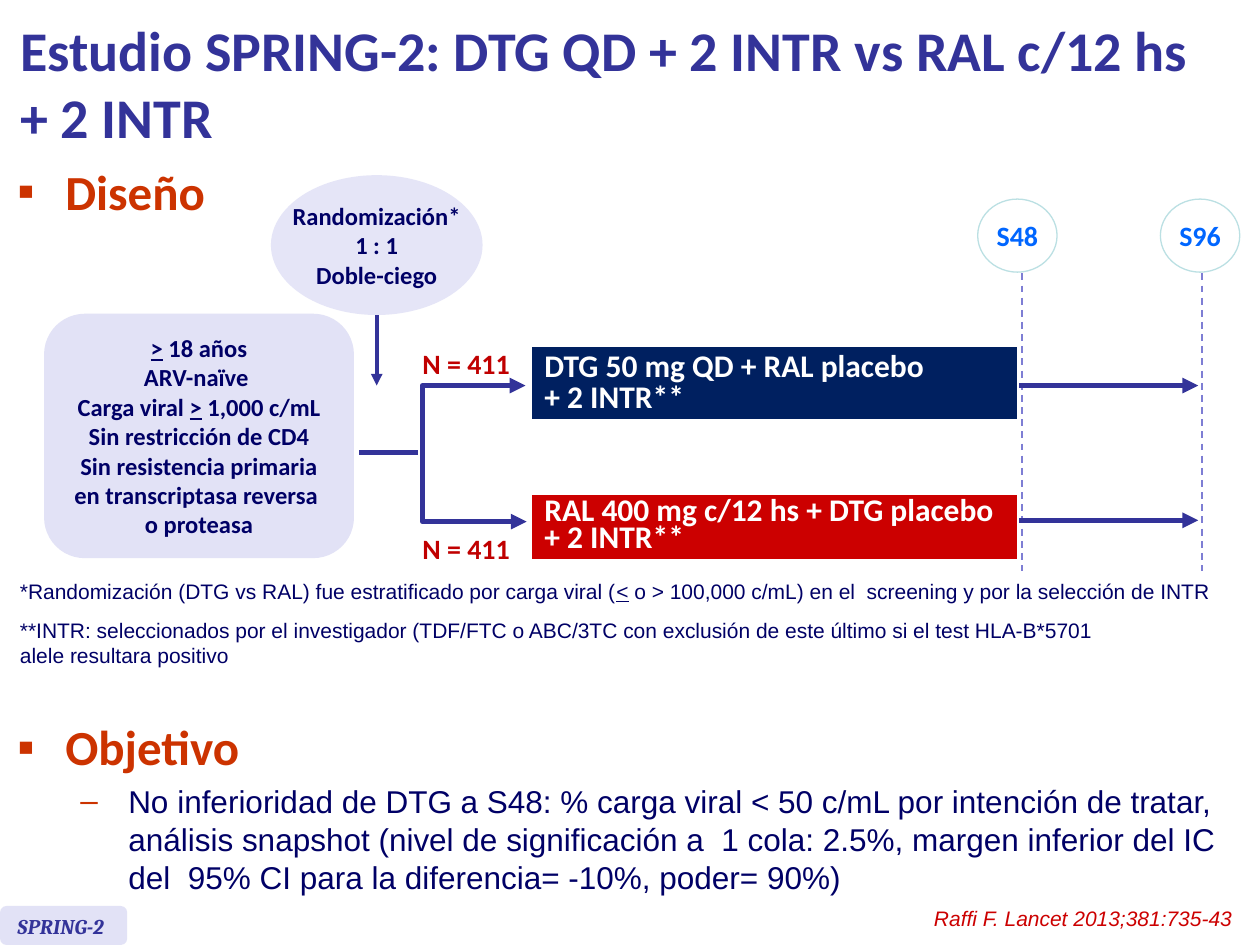
"""Build the SPRING-2 study design slide."""
from lxml.etree import SubElement
from pptx import Presentation
from pptx.dml.color import RGBColor
from pptx.enum.dml import MSO_LINE
from pptx.enum.shapes import MSO_CONNECTOR, MSO_SHAPE
from pptx.enum.text import MSO_ANCHOR, PP_ALIGN
from pptx.oxml.ns import qn
from pptx.util import Inches, Pt

BLUE = RGBColor(0x33, 0x33, 0x99)
NAVY = RGBColor(0x00, 0x00, 0x66)
DARK = RGBColor(0x00, 0x20, 0x60)
RUST = RGBColor(0xCC, 0x33, 0x00)
RED = RGBColor(0xCC, 0x00, 0x00)
WINE = RGBColor(0xC0, 0x00, 0x00)
SKY = RGBColor(0x00, 0x66, 0xFF)
PALE = RGBColor(0xE2, 0xE2, 0xF6)
MIST = RGBColor(0xE5, 0xE5, 0xF7)
TEAL = RGBColor(0xBB, 0xE0, 0xE3)
DASH = RGBColor(0x7E, 0x7E, 0xD4)
WHITE = RGBColor(0xFF, 0xFF, 0xFF)

TITLE = "Estudio SPRING-2: DTG QD + 2 INTR vs RAL c/12 hs\n+ 2 INTR"
RANDOM = ["Randomización*", "1 : 1", "Doble-ciego"]
CRITERIA = [
    "_>_ 18 años",
    "ARV-naïve ",
    "Carga viral _>_ 1,000 c/mL",
    "Sin restricción de CD4",
    "Sin resistencia primaria",
    " en transcriptasa reversa  ",
    "o proteasa",
]
GOAL = (
    "No inferioridad de DTG a S48: % carga viral < 50 c/mL por intención de tratar, "
    "análisis snapshot (nivel de significación a  1 cola: 2.5%, margen inferior del IC "
    "del  95% CI para la diferencia= -10%, poder= 90%)"
)
NOTES = [
    (4.54, 0.3, "*Randomización (DTG vs RAL) fue estratificado por carga viral "
     "(_<_ o > 100,000 c/mL) en el  screening y por la selección de INTR"),
    (4.85, 0.5, "**INTR: seleccionados por el investigador (TDF/FTC o ABC/3TC con "
     "exclusión de este último si el test HLA-B*5701 \nalele resultara positivo"),
]
ARMS = [
    ("DTG 50 mg QD + RAL placebo \n+ 2 INTR**", DARK, 2.75, 0.58, 0.8, 3.06, 2.7),
    ("RAL 400 mg c/12 hs + DTG placebo \n+ 2 INTR**", RED, 3.92, 0.52, 0.7, 4.13, 4.17),
]
WEEKS = [("S48", 7.76, 8.11), ("S96", 9.21, 9.54)]

deck = Presentation()
deck.slide_width, deck.slide_height = Inches(10), Inches(7.5)
slide = deck.slides.add_slide(deck.slide_layouts[5])
shapes = slide.shapes


def style(para, size, face, color, bold=False, italic=False):
    font = para.font
    font.size, font.name = Pt(size), face
    font.bold, font.italic = bold, italic
    font.color.rgb = color


def write(frame, lines, *look, align=PP_ALIGN.LEFT, anchor=MSO_ANCHOR.TOP, wrap=True):
    frame.word_wrap, frame.vertical_anchor = wrap, anchor
    for i, line in enumerate(lines):
        para = frame.paragraphs[0] if i == 0 else frame.add_paragraph()
        if "_" in line:
            for j, part in enumerate(line.split("_")):
                run = para.add_run()
                run.text = part
                if j % 2:
                    run.font.underline = True
        else:
            para.text = line
        para.alignment = align
        style(para, *look)


def add_box(left, top, width, height):
    return shapes.add_textbox(*map(Inches, (left, top, width, height))).text_frame


def add_form(kind, left, top, width, height, fill, edge=None):
    form = shapes.add_shape(kind, *map(Inches, (left, top, width, height)))
    form.shadow.inherit = False
    form.fill.solid()
    form.fill.fore_color.rgb = fill
    if edge:
        form.line.color.rgb, form.line.width = edge, Pt(0.75)
    else:
        form.line.fill.background()
    return form.text_frame


def add_line(x1, y1, x2, y2, color=BLUE, width=3, ends=(), kind=MSO_CONNECTOR.STRAIGHT):
    link = shapes.add_connector(kind, *map(Inches, (x1, y1, x2, y2)))
    link.line.color.rgb, link.line.width = color, Pt(width)
    for end in ends:
        SubElement(link.line._get_or_add_ln(), qn("a:" + end), type="triangle")
    SubElement(link._element.spPr, qn("a:effectLst"))
    return link


def add_bullet(para, mark, indent):
    props = para._p.get_or_add_pPr()
    props.set("marL", str(Inches(indent)))
    props.set("indent", str(Inches(-0.38)))
    tint = SubElement(props, qn("a:buClr"))
    SubElement(tint, qn("a:srgbClr"), val=str(RUST))
    SubElement(props, qn("a:buFont"), typeface="Arial")
    SubElement(props, qn("a:buChar"), char=mark)


def add_head(frame, text):
    frame.word_wrap = True
    para = frame.paragraphs[0]
    para.text = text
    add_bullet(para, "▪", 0.38)
    style(para, 28, "Calibri", RUST, True)


title = shapes.title
title.left, title.top, title.width, title.height = map(Inches, (0.06, 0.05, 9.91, 1.21))
write(title.text_frame, [TITLE], 32, "Calibri", BLUE, True, anchor=MSO_ANCHOR.MIDDLE)

add_head(add_box(0.04, 1.23, 1.98, 0.63), "Diseño")
goal = add_box(0.04, 5.64, 9.8, 1.21)
add_head(goal, "Objetivo")
para = goal.add_paragraph()
para.text, para.level = GOAL, 1
add_bullet(para, "–", 0.88)
para.space_before = Pt(3.6)
style(para, 18, "Arial", NAVY)

MID = dict(align=PP_ALIGN.CENTER, anchor=MSO_ANCHOR.MIDDLE, wrap=False)
add_line(2.99, 2.39, 2.99, 3.06, width=2.25, ends=["tailEnd"])
oval = add_form(MSO_SHAPE.OVAL, 2.15, 1.39, 1.68, 1.11, MIST)
write(oval, RANDOM, 14, "Calibri", NAVY, True, **MID)
card = add_form(MSO_SHAPE.ROUNDED_RECTANGLE, 0.35, 2.49, 2.46, 1.94, PALE)
write(card, CRITERIA, 14, "Calibri", NAVY, True, **MID)

add_line(2.85, 3.59, 3.32, 3.59)
fork = add_line(4.17, 3.06, 4.18, 4.14, ends=["headEnd", "tailEnd"], kind=MSO_CONNECTOR.ELBOW)
guides = fork._element.spPr.find(qn("a:prstGeom")).get_or_add_avLst()
SubElement(guides, qn("a:gd"), name="adj1", fmla="val -8300000")

for name, left, x in WEEKS:
    week = add_form(MSO_SHAPE.OVAL, left, 1.58, 0.63, 0.58, WHITE, TEAL)
    write(week, [name], 16, "Calibri", SKY, True, **MID)
    add_line(x, 2.17, x, 4.53, DASH, 1).line.dash_style = MSO_LINE.DASH

for text, fill, top, height, gap, y, count in ARMS:
    table = shapes.add_table(1, 1, *map(Inches, (4.22, top, 3.86, height))).table
    cell = table.cell(0, 0)
    cell.fill.solid()
    cell.fill.fore_color.rgb = fill
    cell.vertical_anchor = MSO_ANCHOR.MIDDLE
    para = cell.text_frame.paragraphs[0]
    para.text, para.line_spacing = text, gap
    style(para, 18, "Calibri", WHITE, True)
    add_line(8.09, y, 9.51, y, ends=["tailEnd"])
    write(add_box(3.25, count, 0.9, 0.37), ["N = 411"], 16, "Calibri", WINE, True,
          align=PP_ALIGN.CENTER, wrap=False)

for top, height, text in NOTES:
    write(add_box(0.06, top, 9.94, height), [text], 12, "Arial", NAVY)

add_form(MSO_SHAPE.ROUNDED_RECTANGLE, 0, 7.19, 1.01, 0.31, PALE)
write(add_box(0.04, 7.2, 0.94, 0.3), ["SPRING-2"], 12, "Cambria", BLUE, True, True)
write(add_box(6.88, 7.14, 3, 0.3), ["Raffi F. Lancet 2013;381:735-43"], 12, "Arial", RED,
      False, True, align=PP_ALIGN.RIGHT)

deck.save("out.pptx")
